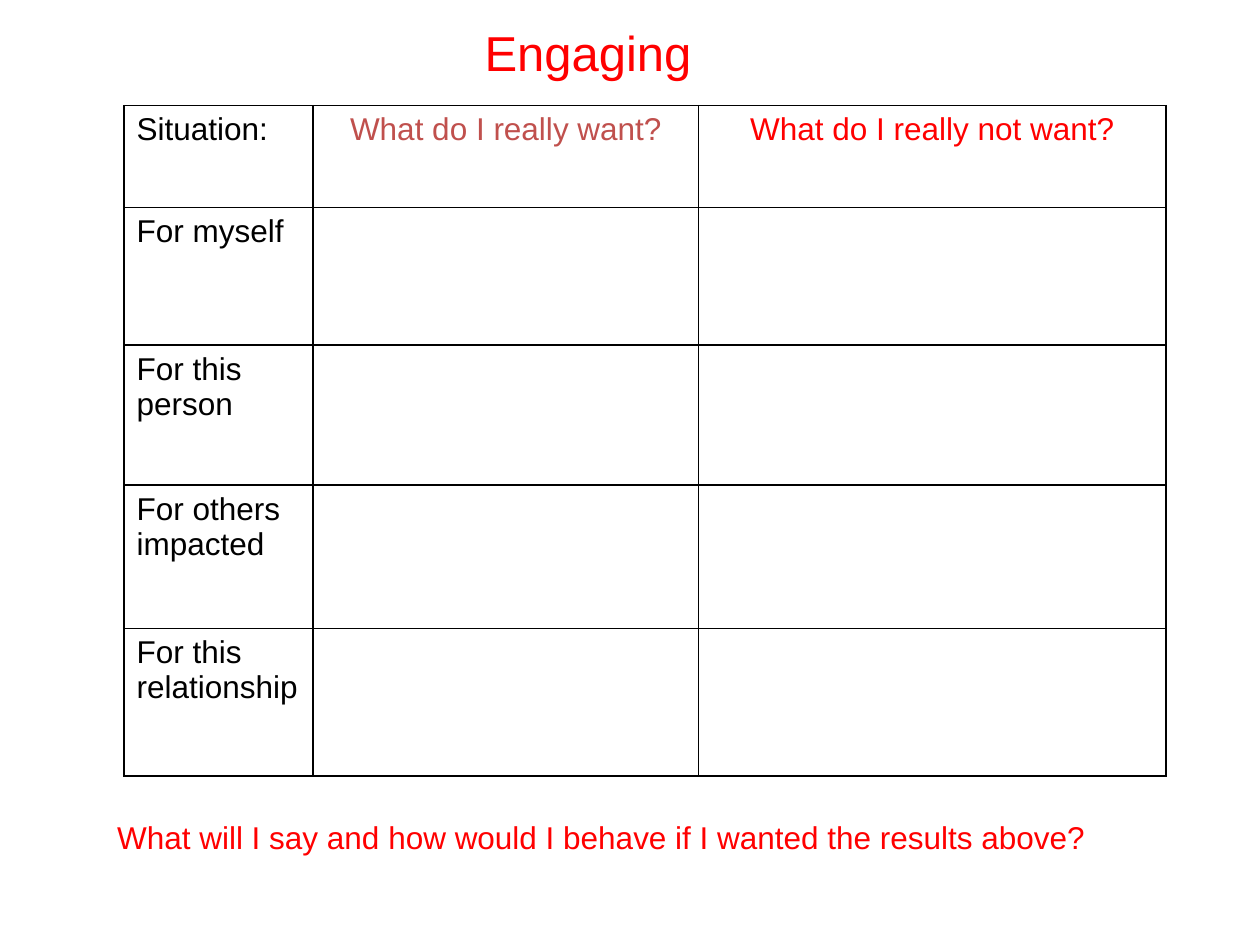
import pptx
import pptx.dml.color
import pptx.enum.text
import pptx.oxml
import pptx.oxml.ns
import pptx.util

Pt = pptx.util.Pt
RGBColor = pptx.dml.color.RGBColor
PP_ALIGN = pptx.enum.text.PP_ALIGN
MSO_ANCHOR = pptx.enum.text.MSO_ANCHOR

RED = RGBColor(0xFF, 0x00, 0x00)
BRICK = RGBColor(0xC0, 0x50, 0x4D)
BLACK = RGBColor(0x00, 0x00, 0x00)
FONT = "Arial"

HEADINGS = [
    ("Situation:", BLACK, PP_ALIGN.LEFT),
    ("What do I really want?", BRICK, PP_ALIGN.CENTER),
    ("What do I really not want?", RED, PP_ALIGN.CENTER),
]
PARTIES = ["For myself", "For this person", "For others impacted", "For this relationship"]
COLUMN_WIDTHS = [108, 220.3, 267.1]
ROW_HEIGHTS = [58.3, 78.6, 80, 82, 84.2]


def write(tf, text, size, color, align=PP_ALIGN.LEFT):
    p = tf.paragraphs[0]
    p.alignment = align
    r = p.add_run()
    r.text = text
    r.font.name = FONT
    r.font.size = Pt(size)
    r.font.color.rgb = color


def set_margins(obj):
    obj.margin_left = obj.margin_right = Pt(7.2)
    obj.margin_top = obj.margin_bottom = Pt(3.6)


def add_borders(cell):
    tcPr = cell._tc.get_or_add_tcPr()
    for i, side in enumerate(("lnL", "lnR", "lnT", "lnB")):
        tcPr.insert(i, pptx.oxml.parse_xml(
            f'<a:{side} {pptx.oxml.ns.nsdecls("a")} w="{Pt(1)}">'
            f'<a:solidFill><a:srgbClr val="{BLACK}"/></a:solidFill></a:{side}>'))


def place_title(slide, left, top, width, height):
    sp = slide.shapes.title
    sp.left, sp.top, sp.width, sp.height = Pt(left), Pt(top), Pt(width), Pt(height)
    tf = sp.text_frame
    tf.word_wrap = True
    tf.auto_size = pptx.enum.text.MSO_AUTO_SIZE.NONE
    tf.vertical_anchor = MSO_ANCHOR.TOP
    set_margins(tf)
    write(tf, "Engaging ", 28, RED, PP_ALIGN.CENTER)


def add_wants_table(slide, left, top):
    table = slide.shapes.add_table(
        len(ROW_HEIGHTS), len(COLUMN_WIDTHS), Pt(left), Pt(top),
        Pt(sum(COLUMN_WIDTHS)), Pt(sum(ROW_HEIGHTS))).table
    table.first_row = False
    table.horz_banding = False
    for column, width in zip(table.columns, COLUMN_WIDTHS):
        column.width = Pt(width)
    for row, height in zip(table.rows, ROW_HEIGHTS):
        row.height = Pt(height)
    for cell in table.iter_cells():
        cell.fill.background()
        set_margins(cell)
        add_borders(cell)
    for col, (text, color, align) in enumerate(HEADINGS):
        write(table.cell(0, col).text_frame, text, 18, color, align)
    for row, text in enumerate(PARTIES, start=1):
        write(table.cell(row, 0).text_frame, text, 18, BLACK)


def add_question(slide, left, top, width, height):
    sp = slide.shapes.add_textbox(Pt(left), Pt(top), Pt(width), Pt(height))
    tf = sp.text_frame
    tf.word_wrap = True
    set_margins(tf)
    write(tf, "What will I say and how would I behave if I wanted the results above?", 18, RED)


def main():
    prs = pptx.Presentation()
    prs.slide_width, prs.slide_height = Pt(720), Pt(540)
    slide = prs.slides.add_slide(prs.slide_layouts.get_by_name("Title Only"))
    place_title(slide, 252, 9.4, 175.7, 41)
    add_wants_table(slide, 70.9, 60.4)
    add_question(slide, 59.8, 463.7, 635, 29)
    prs.save("out.pptx")


if __name__ == "__main__":
    main()
